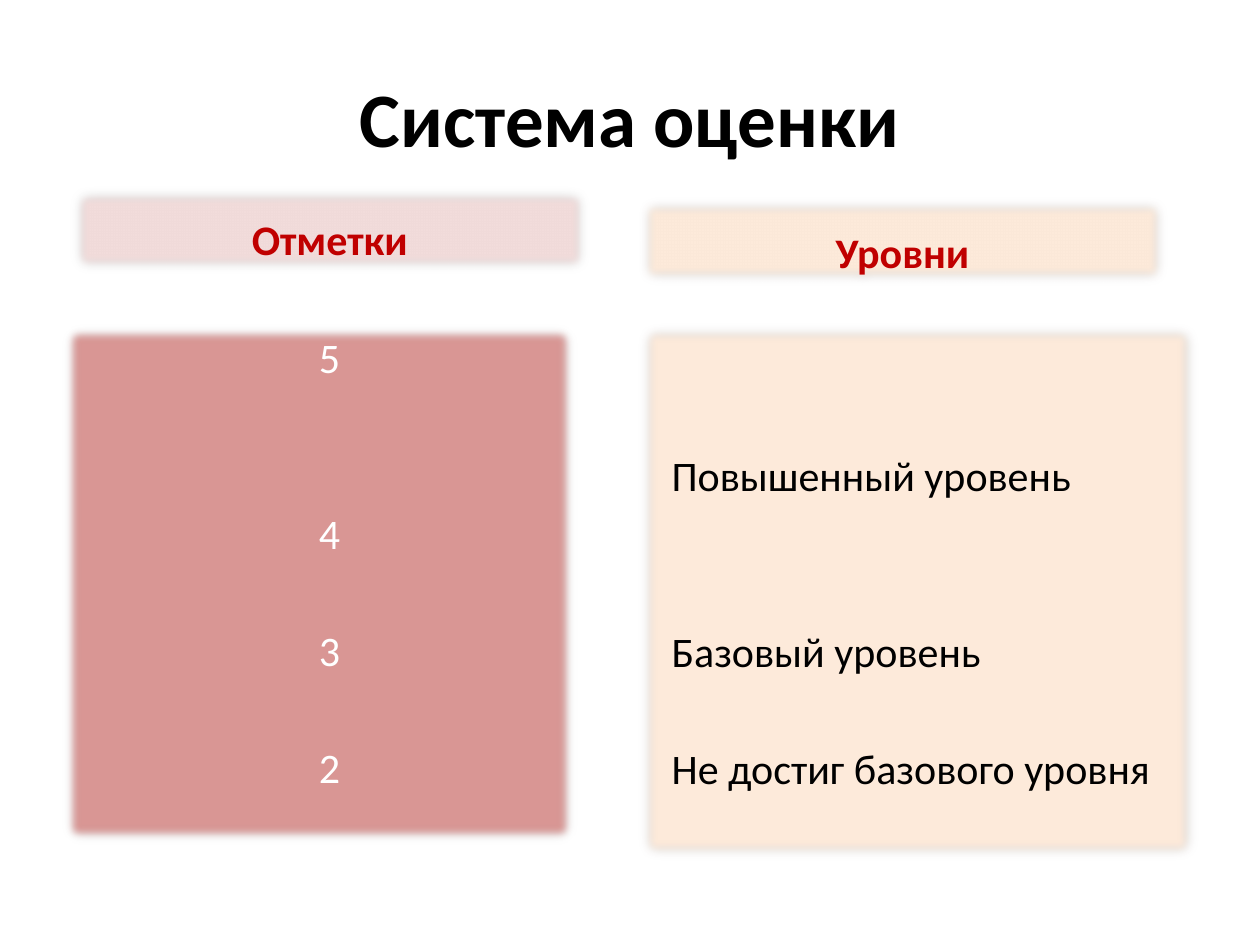
from dataclasses import dataclass

from lxml import etree
from pptx import Presentation
from pptx import util as u
from pptx.dml.color import RGBColor
from pptx.enum import shapes, text
from pptx.oxml import ns


@dataclass(frozen=True)
class Theme:
    font: str = "Calibri"
    title_size: float = 44
    body_size: float = 24
    line_pitch: float = 33.7
    space_before: float = 4.4
    black: str = "000000"
    white: str = "FFFFFF"
    heading: str = "C00000"
    pale_rose: str = "F2DCDB"
    rose: str = "D99694"
    peach: str = "FDEADA"
    outline: str = "C0504D"


def apply(target, values):
    for name, value in values.items():
        setattr(target, name, value)


class SlideBuilder:
    def __init__(self, slide, theme):
        self.slide = slide
        self.theme = theme

    def fill_text(self, shape, lines, size, color, bold=False, centered=True,
                  anchor=text.MSO_ANCHOR.TOP, indent=0.25, first_row=0):
        frame = shape.text_frame
        apply(frame, {
            "word_wrap": True,
            "vertical_anchor": anchor,
            "margin_left": u.Cm(indent),
            "margin_right": u.Cm(0.25),
            "margin_top": u.Cm(0.13) + u.Pt(first_row * self.theme.line_pitch),
            "margin_bottom": u.Cm(0.13),
        })
        previous_row = first_row
        for index, (row, content) in enumerate(lines):
            paragraph = frame.add_paragraph() if index else frame.paragraphs[0]
            skipped = row - previous_row - 1
            gap = self.theme.space_before + skipped * self.theme.line_pitch
            apply(paragraph, {
                "alignment": text.PP_ALIGN.CENTER if centered else text.PP_ALIGN.LEFT,
                "space_before": u.Pt(gap if index else 0),
            })
            run = paragraph.add_run()
            run.text = content
            apply(run.font, {"name": self.theme.font, "size": u.Pt(size), "bold": bold})
            run.font.color.rgb = RGBColor.from_string(color)
            previous_row = row

    def title(self, box, content):
        shape = self.slide.shapes.add_textbox(*map(u.Cm, box))
        self.fill_text(shape, [(0, content)], self.theme.title_size, self.theme.black,
                       bold=True, anchor=text.MSO_ANCHOR.MIDDLE)

    def panel(self, box, fill, shadow_angle, outline=None):
        shape = self.slide.shapes.add_shape(shapes.MSO_SHAPE.RECTANGLE, *map(u.Cm, box))
        shape.fill.solid()
        shape.fill.fore_color.rgb = RGBColor.from_string(fill)
        if outline:
            shape.line.color.rgb = RGBColor.from_string(outline)
            shape.line.width = u.Pt(0.75)
        else:
            shape.line.fill.background()
        self.soften(shape, shadow_angle)
        return shape

    def soften(self, shape, shadow_angle):
        shape.shadow.inherit = False
        effects = shape.element.spPr.find(ns.qn("a:effectLst"))
        shadow = etree.SubElement(effects, ns.qn("a:outerShdw"), {
            "blurRad": str(u.Pt(6)), "dist": "0", "dir": str(shadow_angle * 60000),
            "algn": "ctr", "rotWithShape": "0",
        })
        color = etree.SubElement(shadow, ns.qn("a:srgbClr"), val=self.theme.black)
        etree.SubElement(color, ns.qn("a:alpha"), val="20000")
        etree.SubElement(effects, ns.qn("a:softEdge"), rad=str(u.Pt(5)))

    def heading(self, box, content, fill, shadow_angle, outline=None):
        shape = self.panel(box, fill, shadow_angle, outline)
        self.fill_text(shape, [(0, content)], self.theme.body_size, self.theme.heading,
                       bold=True, anchor=text.MSO_ANCHOR.BOTTOM)

    def column(self, box, lines, fill, shadow_angle, color, centered):
        shape = self.panel(box, fill, shadow_angle)
        self.fill_text(shape, lines, self.theme.body_size, color, centered=centered,
                       indent=0.64, first_row=lines[0][0])


def main():
    presentation = Presentation()
    apply(presentation, {"slide_width": u.Cm(25.4), "slide_height": u.Cm(19.05)})
    slide = presentation.slides.add_slide(presentation.slide_layouts[6])
    theme = Theme()
    builder = SlideBuilder(slide, theme)

    builder.title((1.27, 0.76, 22.86, 3.18), "Система оценки")
    builder.heading((1.47, 3.81, 10.36, 1.65), "Отметки", theme.pale_rose, 225,
                    theme.outline)
    builder.heading((12.9, 4.01, 10.59, 1.7), "Уровни", theme.peach, 315)

    marks = [(0, "5"), (3, "4"), (5, "3"), (7, "2")]
    levels = [(2, "Повышенный уровень"), (5, "Базовый уровень"),
              (7, "Не достиг базового уровня")]
    builder.column((1.27, 6.55, 10.36, 10.46), marks, theme.rose, 225, theme.white, True)
    builder.column((12.9, 6.55, 11.23, 10.77), levels, theme.peach, 315, theme.black, False)

    presentation.save("out.pptx")


if __name__ == "__main__":
    main()
